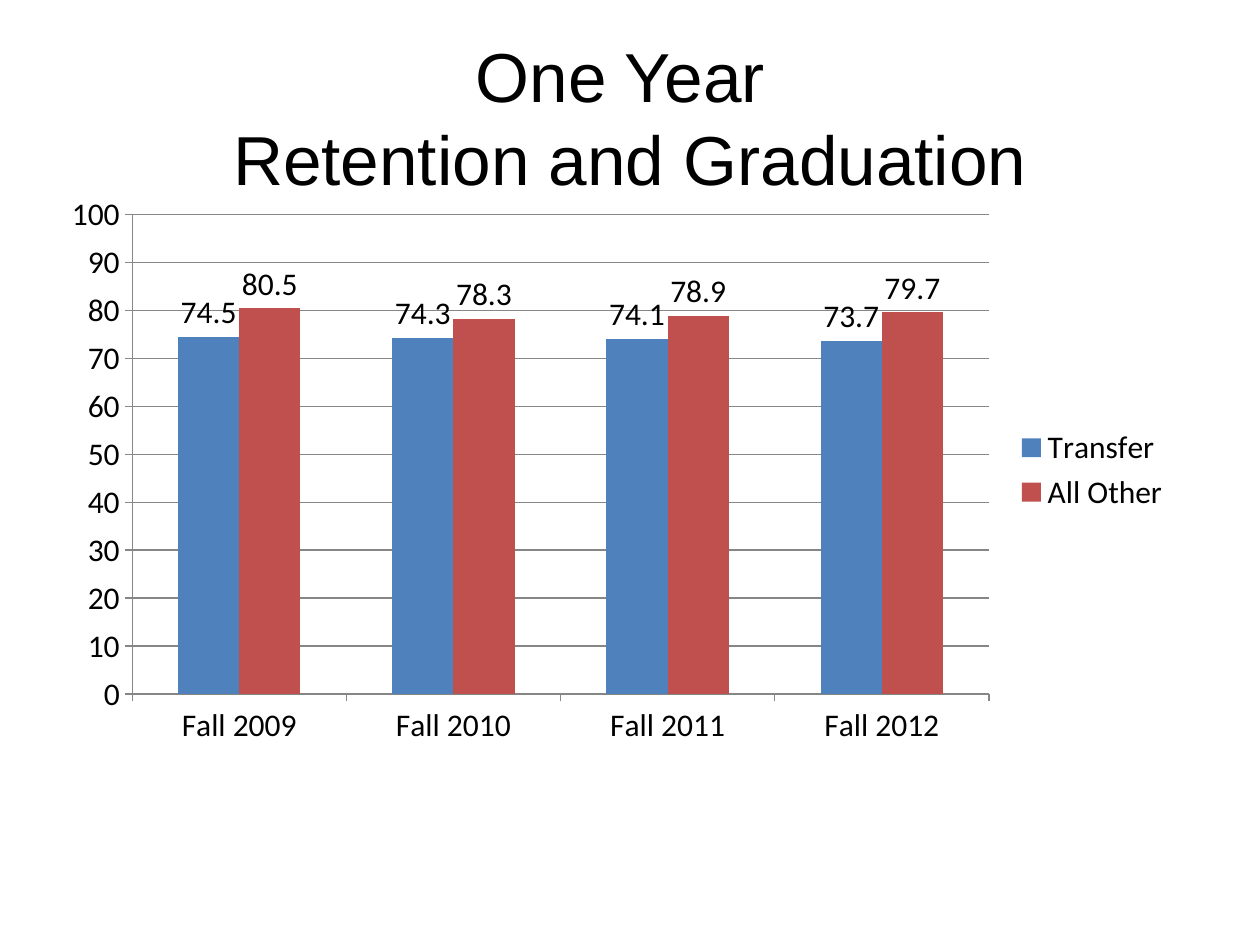
from dataclasses import dataclass

from pptx import Presentation
from pptx.chart.data import CategoryChartData
from pptx.dml.color import RGBColor
from pptx.enum.chart import XL_CHART_TYPE, XL_LABEL_POSITION, XL_LEGEND_POSITION, XL_TICK_MARK
from pptx.enum.text import MSO_ANCHOR, MSO_AUTO_SIZE, PP_ALIGN
from pptx.util import Cm, Pt

CLUSTERED = XL_CHART_TYPE.COLUMN_CLUSTERED
OUTSIDE_END = XL_LABEL_POSITION.OUTSIDE_END
LEGEND_RIGHT = XL_LEGEND_POSITION.RIGHT
TICK_OUTSIDE = XL_TICK_MARK.OUTSIDE
MIDDLE = MSO_ANCHOR.MIDDLE
NO_AUTOFIT = MSO_AUTO_SIZE.NONE
CENTER = PP_ALIGN.CENTER

TITLE_ONLY = 5


@dataclass(frozen=True)
class Theme:
    title_font: str = "Arial"
    chart_font: str = "Calibri"
    title_size: float = 39.6
    chart_size: float = 18
    line_width: float = 0.75
    text: RGBColor = RGBColor(0x00, 0x00, 0x00)
    axis: RGBColor = RGBColor(0x86, 0x86, 0x86)
    series: tuple = (RGBColor(0x4F, 0x81, 0xBD), RGBColor(0xC0, 0x50, 0x4D))


class SlideBuilder:
    def __init__(self, slide, theme):
        self.slide = slide
        self.theme = theme

    def style_font(self, font, name, size):
        font.name = name
        font.size = Pt(size)
        font.bold = False
        font.color.rgb = self.theme.text

    def style_line(self, line):
        line.color.rgb = self.theme.axis
        line.width = Pt(self.theme.line_width)

    def title(self, text, left, top, width, height):
        box = self.slide.shapes.title
        box.left, box.top, box.width, box.height = left, top, width, height
        frame = box.text_frame
        frame.text = text
        frame.word_wrap = True
        frame.auto_size = NO_AUTOFIT
        frame.vertical_anchor = MIDDLE
        para = frame.paragraphs[0]
        para.alignment = CENTER
        for span in para.runs:
            self.style_font(span.font, self.theme.title_font, self.theme.title_size)

    def column_chart(self, categories, series, left, top, width, height):
        data = CategoryChartData()
        data.categories = categories
        for name, values in series.items():
            data.add_series(name, values)
        chart = self.slide.shapes.add_chart(CLUSTERED, left, top, width, height, data).chart
        self.style_font(chart.font, self.theme.chart_font, self.theme.chart_size)
        chart.has_title = False
        chart.has_legend = True
        chart.legend.position = LEGEND_RIGHT
        chart.legend.include_in_layout = False

        for axis in (chart.category_axis, chart.value_axis):
            axis.major_tick_mark = TICK_OUTSIDE
            self.style_line(axis.format.line)
        scale = chart.value_axis
        scale.minimum_scale, scale.maximum_scale, scale.major_unit = 0, 100, 10
        scale.has_major_gridlines = True
        self.style_line(scale.major_gridlines.format.line)

        plot = chart.plots[0]
        plot.gap_width = 150
        plot.overlap = 0
        plot.vary_by_categories = False
        for columns, color in zip(plot.series, self.theme.series):
            columns.format.fill.solid()
            columns.format.fill.fore_color.rgb = color
            labels = columns.data_labels
            labels.show_value = True
            labels.position = OUTSIDE_END


def main():
    deck = Presentation()
    deck.slide_width, deck.slide_height = Cm(25.4), Cm(19.05)
    page = SlideBuilder(deck.slides.add_slide(deck.slide_layouts[TITLE_ONLY]), Theme())
    page.title("One Year \vRetention and Graduation", Cm(1.27), Cm(0.76), Cm(22.86), Cm(3.18))
    page.column_chart(
        [f"Fall {year}" for year in range(2009, 2013)],
        {"Transfer": (74.5, 74.3, 74.1, 73.7), "All Other": (80.5, 78.3, 78.9, 79.7)},
        Cm(0.99), Cm(3.71), Cm(22.86), Cm(11.53),
    )
    deck.save("out.pptx")


if __name__ == "__main__":
    main()
